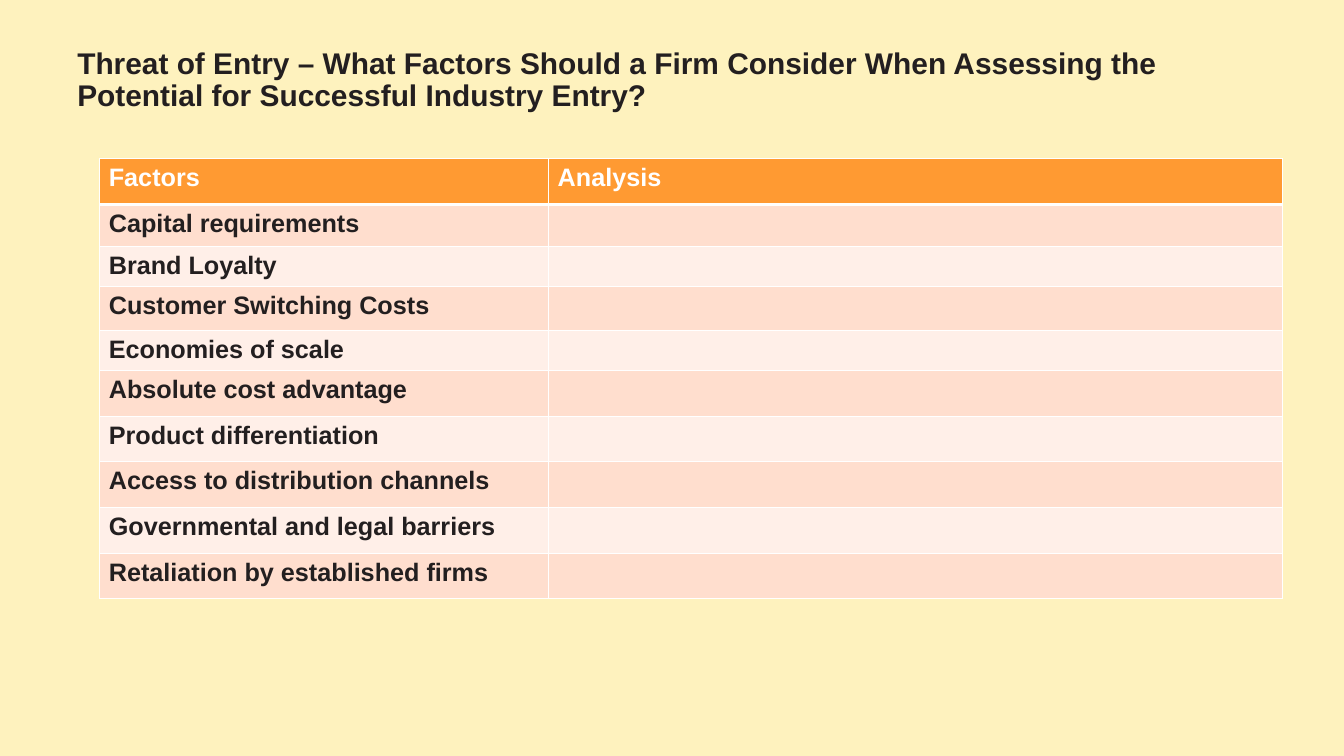
from dataclasses import dataclass

from lxml import etree
from pptx import Presentation
from pptx.dml.color import RGBColor
from pptx.enum.text import MSO_ANCHOR, MSO_AUTO_SIZE, PP_ALIGN
from pptx.oxml.ns import qn
from pptx.slide import Slide
from pptx.table import _Cell
from pptx.text.text import TextFrame
from pptx.util import Pt

EMU_PER_PX = 9144
LEFT = PP_ALIGN.LEFT
TOP, BOTTOM = MSO_ANCHOR.TOP, MSO_ANCHOR.BOTTOM
NO_AUTOFIT = MSO_AUTO_SIZE.NONE


@dataclass(frozen=True)
class Theme:
    font: str = "Arial"
    background: str = "FEF2BE"
    ink: str = "231F20"
    white: str = "FFFFFF"
    header: str = "FF9A32"
    bands: tuple[str, str] = ("FFDECE", "FFEFE8")
    title_size: int = 32
    table_size: int = 27


@dataclass(frozen=True)
class TableRow:
    factor: str
    height: int
    analysis: str = ""


THEME = Theme()
TITLE = (
    "Threat of Entry – What Factors Should a Firm Consider When Assessing "
    "the Potential for Successful Industry Entry?"
)
COLUMN_WIDTHS = (668, 1093)
ROWS = (
    TableRow("Factors", 68, "Analysis"),
    TableRow("Capital requirements", 62),
    TableRow("Brand Loyalty", 60),
    TableRow("Customer Switching Costs", 65),
    TableRow("Economies of scale", 60),
    TableRow("Absolute cost advantage", 68),
    TableRow("Product differentiation", 68),
    TableRow("Access to distribution channels", 68),
    TableRow("Governmental and legal barriers", 68),
    TableRow("Retaliation by established firms", 68),
)


def px(length: int) -> int:
    return length * EMU_PER_PX


def write_text(frame: TextFrame, text: str, *, size: int, color: str,
               line_spacing: float = 1.0) -> None:
    paragraph = frame.paragraphs[0]
    paragraph.alignment = LEFT
    paragraph.line_spacing = line_spacing
    run = paragraph.add_run()
    run.text = text
    run.font.name = THEME.font
    run.font.size = Pt(size)
    run.font.bold = True
    run.font.color.rgb = RGBColor.from_string(color)


def add_title(slide: Slide) -> None:
    title = slide.shapes.title
    title.left, title.top, title.width, title.height = map(px, (105, 36, 1784, 138))
    frame = title.text_frame
    frame.word_wrap = True
    frame.auto_size = NO_AUTOFIT
    frame.vertical_anchor = BOTTOM
    frame.margin_left = frame.margin_right = px(10)
    frame.margin_top = frame.margin_bottom = px(6)
    write_text(frame, TITLE, size=THEME.title_size, color=THEME.ink, line_spacing=0.9)


def set_border(cell: _Cell, side: str, width: int) -> None:
    properties = cell._tc.get_or_add_tcPr()
    line = etree.SubElement(properties, qn(f"a:{side}"), w=str(Pt(width)))
    fill = etree.SubElement(line, qn("a:solidFill"))
    etree.SubElement(fill, qn("a:srgbClr"), val=THEME.white)


def format_cell(cell: _Cell, text: str, row_index: int) -> None:
    is_header = row_index == 0
    top_width = 3 if row_index == 1 else 1
    bottom_width = 3 if is_header else 1
    for side, width in (("lnL", 1), ("lnR", 1), ("lnT", top_width), ("lnB", bottom_width)):
        set_border(cell, side, width)
    fill_color = THEME.header if is_header else THEME.bands[(row_index - 1) % 2]
    cell.fill.solid()
    cell.fill.fore_color.rgb = RGBColor.from_string(fill_color)
    cell.vertical_anchor = TOP
    cell.margin_left = cell.margin_right = px(14)
    cell.margin_top = cell.margin_bottom = px(8)
    if text:
        write_text(cell.text_frame, text, size=THEME.table_size,
                   color=THEME.white if is_header else THEME.ink)


def add_factor_table(slide: Slide) -> None:
    height = sum(row.height for row in ROWS)
    frame = slide.shapes.add_table(len(ROWS), len(COLUMN_WIDTHS), px(148), px(236),
                                   px(sum(COLUMN_WIDTHS)), px(height))
    table = frame.table
    for column, width in zip(table.columns, COLUMN_WIDTHS):
        column.width = px(width)
    for row_index, row in enumerate(ROWS):
        table.rows[row_index].height = px(row.height)
        for column_index, text in enumerate((row.factor, row.analysis)):
            format_cell(table.cell(row_index, column_index), text, row_index)


def main() -> None:
    presentation = Presentation()
    presentation.slide_width = px(2000)
    presentation.slide_height = px(1125)
    slide = presentation.slides.add_slide(presentation.slide_layouts[0])
    subtitle = slide.placeholders[1].element
    subtitle.getparent().remove(subtitle)
    slide.background.fill.solid()
    slide.background.fill.fore_color.rgb = RGBColor.from_string(THEME.background)
    add_title(slide)
    add_factor_table(slide)
    presentation.save("out.pptx")


if __name__ == "__main__":
    main()
